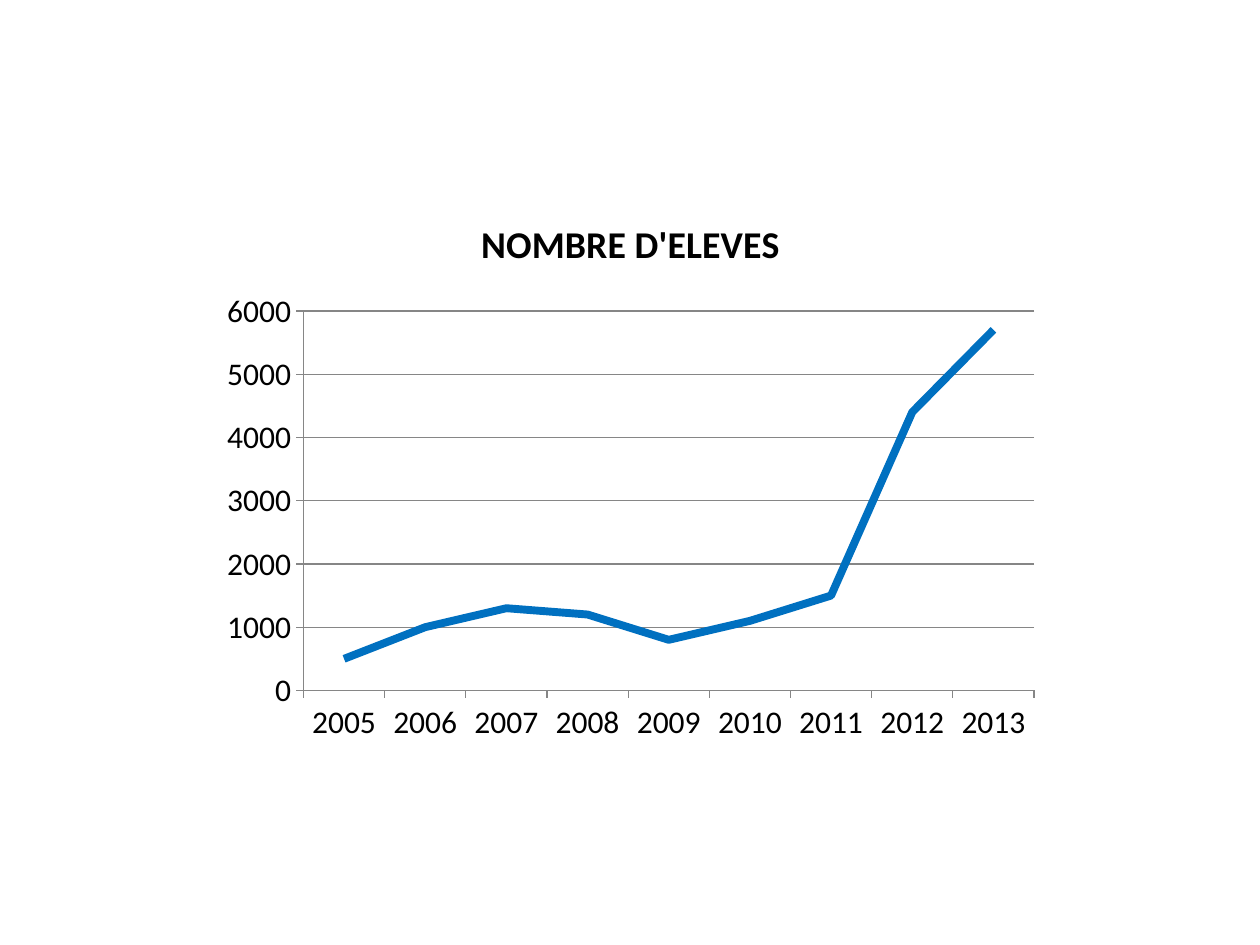
import pptx
import pptx.chart.data
import pptx.dml.color
import pptx.enum.chart
import pptx.util
from dataclasses import dataclass
from pptx.util import Inches


@dataclass(frozen=True)
class Theme:
    font: str = "Calibri"
    text: str = "000000"
    series: str = "0070C0"
    rule: str = "868686"
    label_size: float = 18
    title_size: float = 21.6
    series_width: float = 4.5
    rule_width: float = 0.75


THEME = Theme()
TITLE = "NOMBRE D'ELEVES"
PUPILS = {
    2005: 500, 2006: 1000, 2007: 1300, 2008: 1200, 2009: 800,
    2010: 1100, 2011: 1500, 2012: 4400, 2013: 5700,
}


def style_font(font, size, bold=False):
    font.name = THEME.font
    font.size = pptx.util.Pt(size)
    font.bold = bold
    font.color.rgb = pptx.dml.color.RGBColor.from_string(THEME.text)


def style_line(line, color, width):
    line.color.rgb = pptx.dml.color.RGBColor.from_string(color)
    line.width = pptx.util.Pt(width)


def add_title(chart, text):
    chart.has_title = True
    frame = chart.chart_title.text_frame
    span = frame.paragraphs[0].add_run()
    span.text = text
    style_font(span.font, THEME.title_size, bold=True)
    chart.chart_title.include_in_layout = False


def style_axes(chart):
    for axis in (chart.category_axis, chart.value_axis):
        axis.major_tick_mark = pptx.enum.chart.XL_TICK_MARK.OUTSIDE
        axis.minor_tick_mark = pptx.enum.chart.XL_TICK_MARK.NONE
        style_line(axis.format.line, THEME.rule, THEME.rule_width)
    values = chart.value_axis
    values.minimum_scale, values.maximum_scale = 0, 6000
    values.major_unit = 1000
    values.has_major_gridlines = True
    style_line(values.major_gridlines.format.line, THEME.rule, THEME.rule_width)


def add_line_chart(page, title, points):
    data = pptx.chart.data.CategoryChartData(number_format="General")
    data.categories = [str(year) for year in points]
    data.add_series(title, points.values())
    chart = page.shapes.add_chart(
        pptx.enum.chart.XL_CHART_TYPE.LINE_STACKED,
        Inches(1.67), Inches(1.53), Inches(6.67), Inches(4.44), data,
    ).chart
    style_font(chart.font, THEME.label_size)
    chart.has_legend = False
    add_title(chart, title)
    style_axes(chart)

    # Plain thick line without markers
    chart.plots[0].vary_by_categories = False
    series = chart.plots[0].series[0]
    series.smooth = False
    series.marker.style = pptx.enum.chart.XL_MARKER_STYLE.NONE
    style_line(series.format.line, THEME.series, THEME.series_width)


def main():
    # Page
    deck = pptx.Presentation()
    deck.slide_width, deck.slide_height = Inches(10), Inches(7.5)
    page = deck.slides.add_slide(deck.slide_layouts[6])

    # Pupils per year
    add_line_chart(page, TITLE, PUPILS)
    deck.save("out.pptx")


if __name__ == "__main__":
    main()
